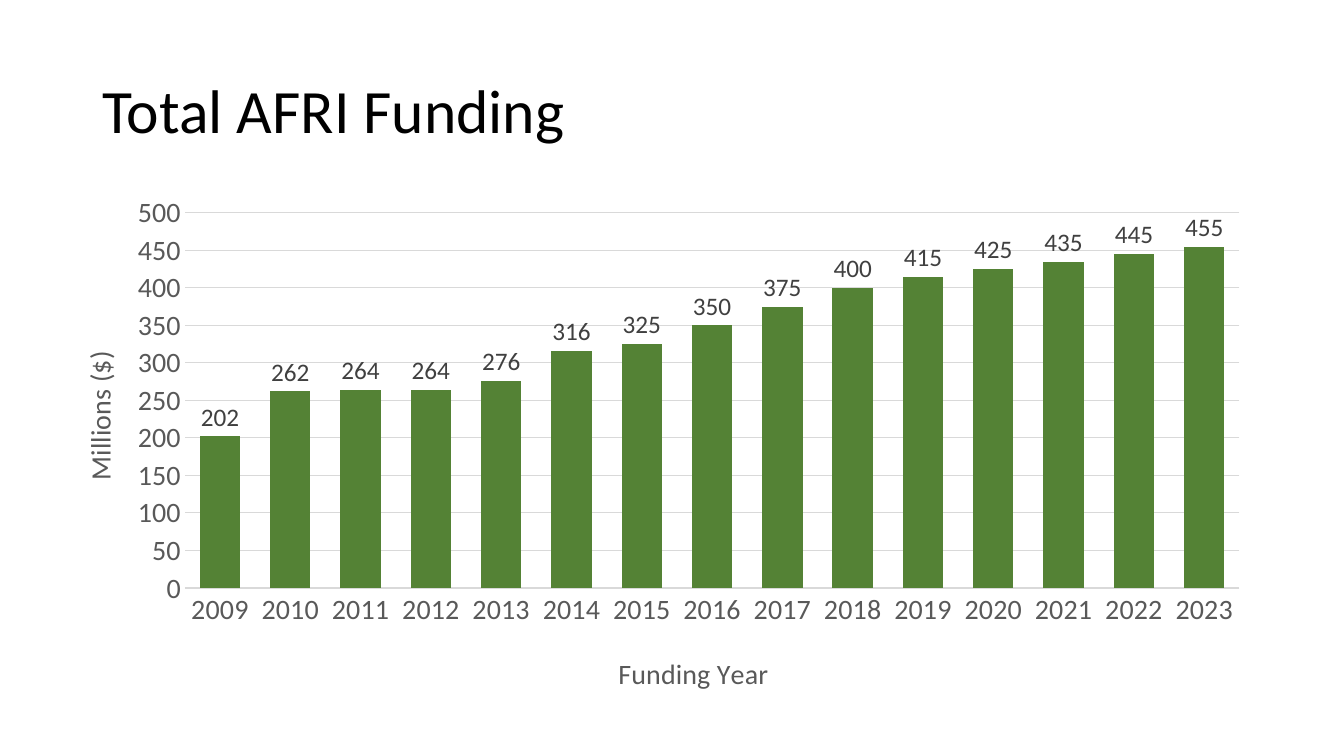
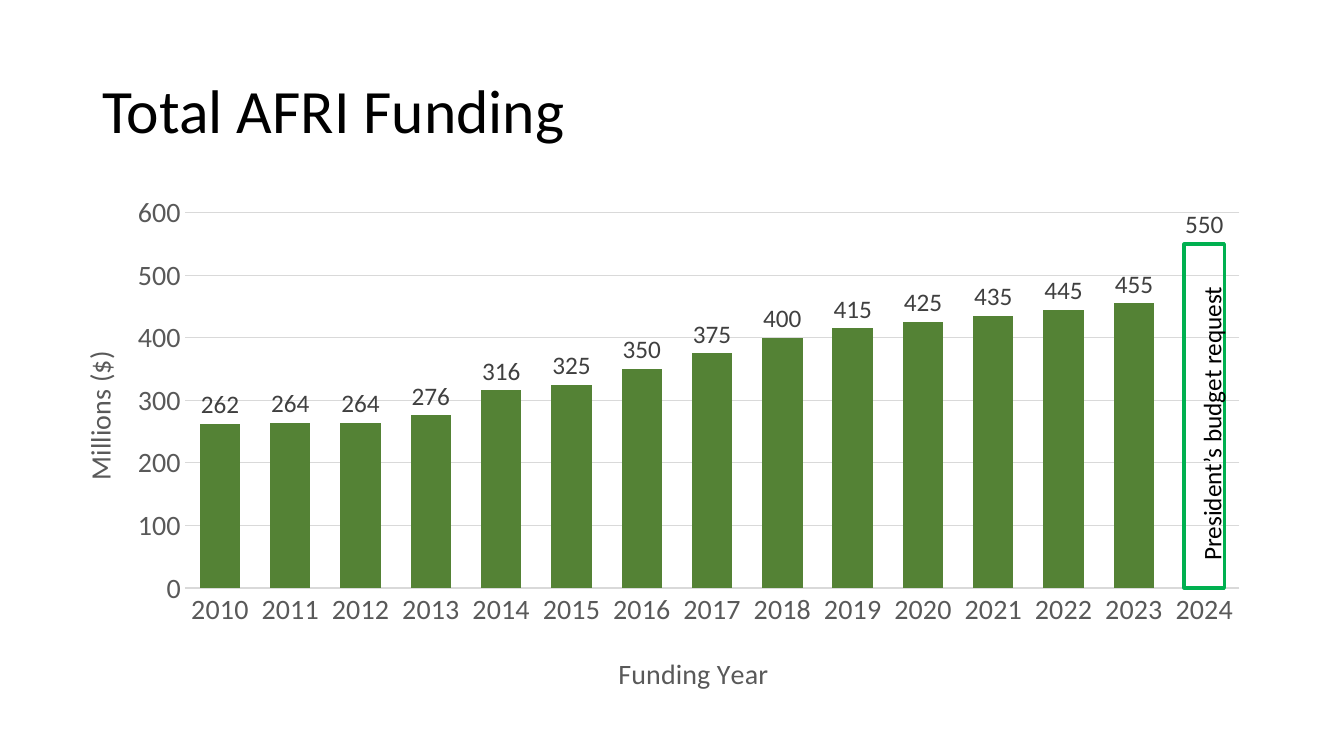
from pptx import Presentation
from pptx.chart.data import CategoryChartData
from pptx.dml.color import RGBColor
from pptx.enum.chart import XL_CHART_TYPE, XL_LABEL_POSITION, XL_TICK_MARK
from pptx.enum.text import MSO_ANCHOR
from pptx.oxml import parse_xml
from pptx.oxml.ns import nsdecls
from pptx.util import Cm, Pt

COLUMN = XL_CHART_TYPE.COLUMN_CLUSTERED
ABOVE = XL_LABEL_POSITION.OUTSIDE_END
NO_TICK = XL_TICK_MARK.NONE
MIDDLE = MSO_ANCHOR.MIDDLE

FONT = "Calibri"
COLORS = {
    "black": "000000",
    "label": "404040",
    "axis": "595959",
    "grid": "D9D9D9",
    "bar": "548235",
    "request": "00B050",
}
FUNDS = {
    2009: 202, 2010: 262, 2011: 264, 2012: 264, 2013: 276, 2014: 316,
    2015: 325, 2016: 350, 2017: 375, 2018: 400, 2019: 415, 2020: 425,
    2021: 435, 2022: 445, 2023: 455, 2024: 550,
}


def color(name):
    return RGBColor.from_string(COLORS[name])


def place(parent, index, **sides):
    """Give a chart part a fixed place, in fractions of the chart."""
    for old in parent.xpath("./c:layout"):
        parent.remove(old)
    inner = '<c:layoutTarget val="inner"/>' if "w" in sides else ""
    modes = "".join(f'<c:{s}Mode val="edge"/>' for s in "xy")
    spots = "".join(f'<c:{s} val="{v}"/>' for s, v in sides.items())
    parent.insert(index, parse_xml(
        f'<c:layout {nsdecls("c")}><c:manualLayout>{inner}{modes}{spots}'
        "</c:manualLayout></c:layout>"))


class Deck:
    def __init__(self):
        self.prs = Presentation()
        self.prs.slide_width = Cm(33.87)
        self.prs.slide_height = Cm(19.05)
        self.slide = None

    def add(self):
        self.slide = self.prs.slides.add_slide(self.prs.slide_layouts[6])

    def style(self, font, size, tone):
        font.name = FONT
        font.size = Pt(size)
        font.bold = False
        font.color.rgb = color(tone)

    def text(self, words, box, size, turn=0, wrap=True):
        shape = self.slide.shapes.add_textbox(*map(Cm, box))
        shape.rotation = turn
        frame = shape.text_frame
        frame.word_wrap = wrap
        run = frame.paragraphs[0].add_run()
        run.text = words
        self.style(run.font, size, "black")
        return frame

    def title(self, words):
        frame = self.text(words, (2.33, 1.01, 29.21, 3.68), 44)
        frame.vertical_anchor = MIDDLE
        frame.paragraphs[0].line_spacing = 0.9

    def axis(self, axis, words, turn, x, y):
        axis.major_tick_mark = axis.minor_tick_mark = NO_TICK
        self.style(axis.tick_labels.font, 20, "axis")
        title = axis.axis_title
        run = title.text_frame.paragraphs[0].add_run()
        run.text = words
        self.style(run.font, 20, "axis")
        title.element.xpath(".//a:bodyPr")[0].set("rot", str(turn * 60000))
        place(title.element, 1, x=x, y=y)

    def chart(self, years, top, step):
        data = CategoryChartData()
        data.categories = [str(year) for year in years]
        data.add_series("Series 1", [FUNDS[year] for year in years])
        box = map(Cm, (1.09, 4.67, 30.76, 13.08))
        chart = self.slide.shapes.add_chart(COLUMN, *box, data).chart
        chart.has_legend = chart.has_title = False
        self.style(chart.font, 10, "black")
        place(chart.element.xpath(".//c:plotArea")[0], 0,
              x=0.116, y=0.053, w=0.864, h=0.723)

        # Axes
        base, scale = chart.category_axis, chart.value_axis
        self.axis(base, "Funding Year", 0, 0.467, 0.893)
        self.axis(scale, "Millions ($)", -90, 0.026, 0.31)
        scale.minimum_scale, scale.maximum_scale = 0, top
        scale.major_unit = step
        scale.format.line.fill.background()
        for line in (base.format.line, scale.major_gridlines.format.line):
            line.color.rgb = color("grid")
            line.width = Pt(0.75)

        # Bars and their values
        plot = chart.plots[0]
        plot.gap_width, plot.overlap = 74, -27
        plot.vary_by_categories = False
        bars = plot.series[0]
        bars.format.fill.solid()
        bars.format.fill.fore_color.rgb = color("bar")
        bars.invert_if_negative = False
        labels = bars.data_labels
        labels.show_value = True
        labels.position = ABOVE
        self.style(labels.font, 18, "label")
        return bars

    def hollow(self, bar):
        bar.format.fill.background()
        bar.format.line.color.rgb = color("request")
        bar.format.line.width = Pt(2.25)


def main():
    deck = Deck()
    for first, top, step in ((2009, 500, 50), (2010, 600, 100)):
        deck.add()
        deck.title("Total AFRI Funding")
        bars = deck.chart(range(first, first + 15), top, step)

    # The last year on the second slide is only a request
    deck.hollow(bars.points[14])
    deck.text("President’s budget request", (26.04, 9.37, 8.99, 1.03), 18, 270)
    deck.prs.save("out.pptx")


if __name__ == "__main__":
    main()
